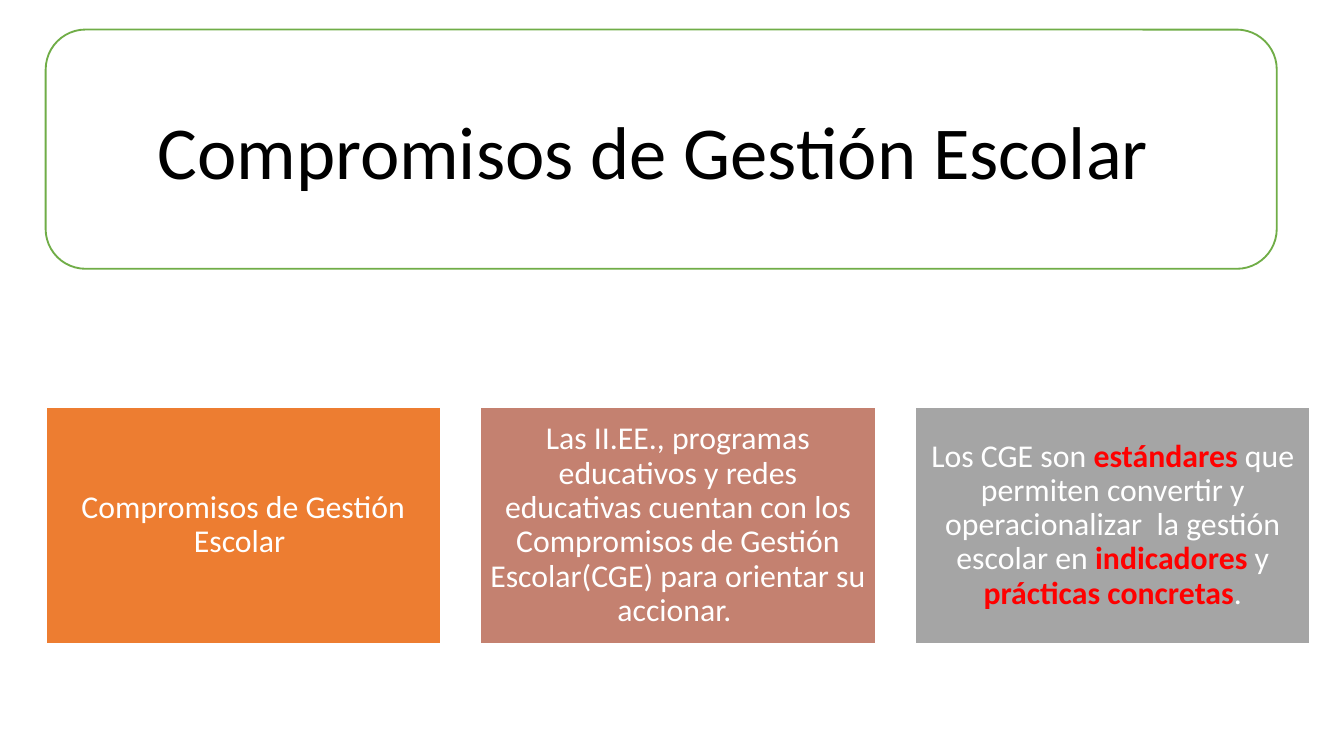
from pptx import Presentation
from pptx import util as u
from pptx.dml.color import RGBColor
from pptx.enum import shapes, text

WIDE = 10
HIGH = WIDE * 9 / 16
LEFT, LAST = 0.34, 6.81
HUES = {
    "white": "FFFFFF", "black": "000000", "green": "70AD47", "red": "FF0000",
    "orange": "ED7D31", "rose": "C48170", "gray": "A5A5A5",
}
CARDS = [
    ("orange", ["Compromisos de Gestión Escolar "]),
    ("rose", ["Las II.EE., programas educativos y redes educativas cuentan con los "
              "Compromisos de Gestión Escolar(CGE) para orientar su accionar. "]),
    ("gray", ["Los CGE son ", "estándares",
              " que permiten convertir y operacionalizar  la gestión escolar en ",
              "indicadores", " y ", "prácticas concretas", "."]),
]
STEP = (LAST - LEFT) / (len(CARDS) - 1)


def hue(name):
    return RGBColor.from_string(HUES[name])


def add_box(slide, kind, place, fill, line):
    box = slide.shapes.add_shape(kind, *[u.Inches(n) for n in place])
    box.shadow.inherit = False
    box.fill.solid()
    box.fill.fore_color.rgb = hue(fill)
    box.line.color.rgb = hue(line)
    box.line.width = u.Pt(1)
    frame = box.text_frame
    frame.word_wrap = True
    frame.vertical_anchor = text.MSO_ANCHOR.MIDDLE
    return frame


def write(frame, parts, size, color):
    para = frame.paragraphs[0]
    para.alignment = text.PP_ALIGN.CENTER
    para.font.name = "Calibri"
    para.font.size = u.Pt(size)
    for i, part in enumerate(parts):
        run = para.add_run()
        run.text = part
        strong = i % 2 == 1
        run.font.bold = strong
        run.font.color.rgb = hue("red" if strong else color)
    return para


def add_title(slide, words):
    frame = add_box(slide, shapes.MSO_SHAPE.ROUNDED_RECTANGLE,
                    (LEFT, 0.22, 9.16, 1.78), "white", "green")
    write(frame, [words], 40, "black")


def add_card(slide, col, fill, parts):
    frame = add_box(slide, shapes.MSO_SHAPE.RECTANGLE,
                    (LEFT + col * STEP, 3.03, 2.94, 1.76), fill, "white")
    frame.margin_left = frame.margin_right = u.Inches(0.07)
    frame.margin_top = frame.margin_bottom = u.Inches(0.07)
    para = write(frame, parts, 17, "white")
    para.line_spacing = 0.9


def main():
    deck = Presentation()
    deck.slide_width = u.Inches(WIDE)
    deck.slide_height = u.Inches(HIGH)
    slide = deck.slides.add_slide(deck.slide_layouts[6])
    for col, (fill, parts) in enumerate(CARDS):
        add_card(slide, col, fill, parts)
    add_title(slide, "Compromisos de Gestión Escolar ")
    deck.save("out.pptx")


if __name__ == "__main__":
    main()
